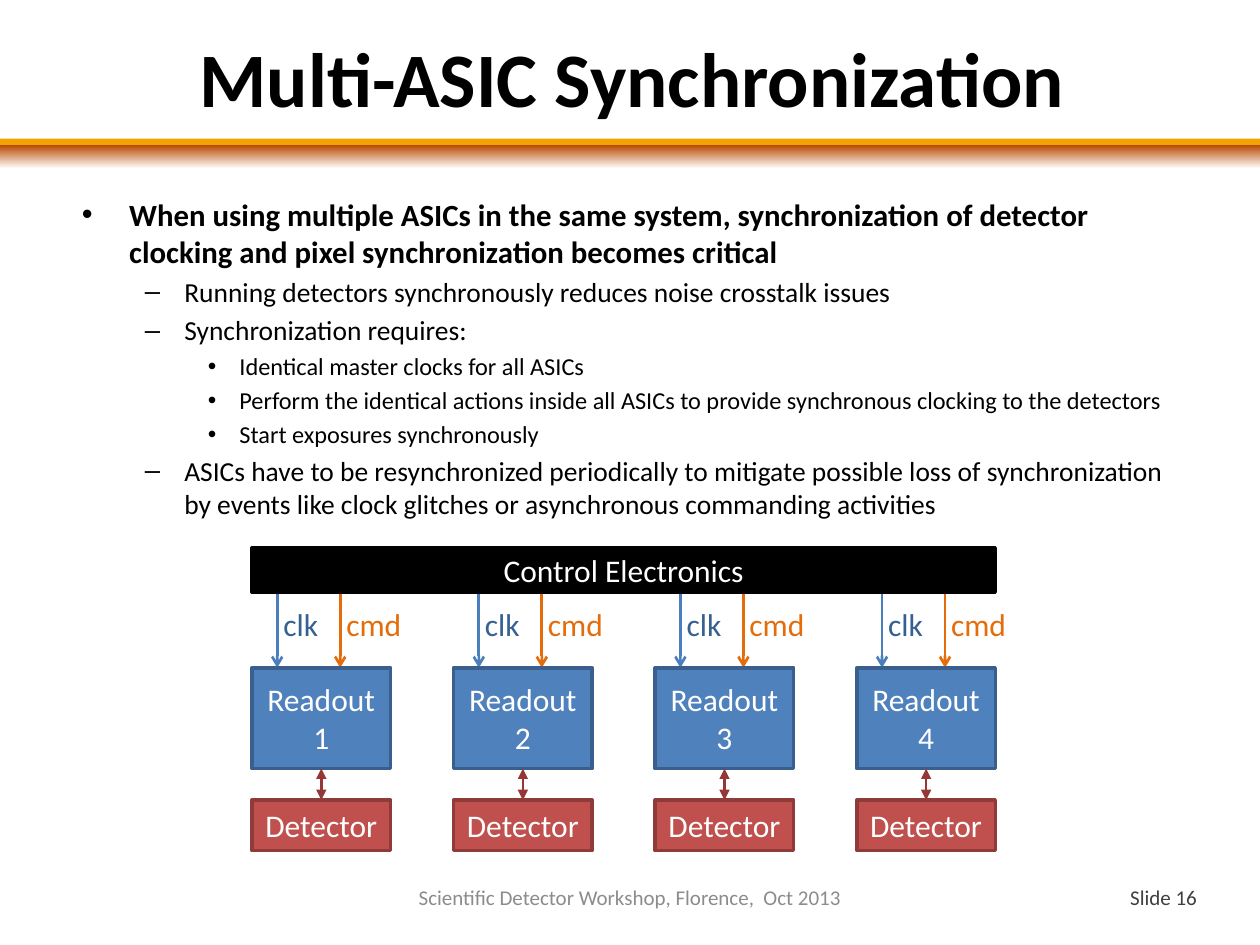
from lxml.etree import SubElement
from pptx import Presentation
from pptx.dml.color import RGBColor
from pptx.enum.shapes import MSO_CONNECTOR, MSO_SHAPE
from pptx.enum.text import MSO_ANCHOR, MSO_AUTO_SIZE, PP_ALIGN
from pptx.oxml.ns import qn
from pptx.util import Inches, Pt

FONT = "Calibri"
LEVEL_SIZES = [17.6, 15.7, 13.9]
BULLETS = [
    (0, "When using multiple ASICs in the same system, synchronization of detector "
        "clocking and pixel synchronization becomes critical"),
    (1, "Running detectors synchronously reduces noise crosstalk issues"),
    (1, "Synchronization requires:"),
    (2, "Identical master clocks for all ASICs"),
    (2, "Perform the identical actions inside all ASICs to provide synchronous "
        "clocking to the detectors"),
    (2, "Start exposures synchronously"),
    (1, "ASICs have to be resynchronized periodically to mitigate possible loss of "
        "synchronization by events like clock glitches or asynchronous commanding "
        "activities"),
]
# label, line colour, text colour, label width
SIGNALS = [("clk", "4B7EBC", "376092", 0.48), ("cmd", "E46C0A", "E46C0A", 0.64)]


def rgb(color):
    return RGBColor.from_string(color)


def set_font(p, size, color, bold=False):
    f = p.font
    f.name, f.size, f.bold = FONT, Pt(size), bold
    f.color.rgb = rgb(color)


def place(sp, x, y, w, h):
    sp.left, sp.top, sp.width, sp.height = (Inches(v) for v in (x, y, w, h))


def add_rect(s, x, y, w, h, fill=None, line=None):
    sp = s.shapes.add_shape(MSO_SHAPE.RECTANGLE, *(Inches(v) for v in (x, y, w, h)))
    sp.shadow.inherit = False
    if fill:
        sp.fill.solid()
        sp.fill.fore_color.rgb = rgb(fill)
    if line:
        sp.line.color.rgb = rgb(line)
        sp.line.width = Pt(2)
    else:
        sp.line.fill.background()
    return sp


def add_block(s, x, y, w, h, text, fill, line):
    """Draw a filled box with a centred white label."""
    tf = add_rect(s, x, y, w, h, fill, line).text_frame
    tf.word_wrap = True
    tf.vertical_anchor = MSO_ANCHOR.MIDDLE
    p = tf.paragraphs[0]
    p.text = text
    p.alignment = PP_ALIGN.CENTER
    set_font(p, 18, "FFFFFF")


def add_text(s, x, y, w, h, text, size, color):
    tf = s.shapes.add_textbox(*(Inches(v) for v in (x, y, w, h))).text_frame
    p = tf.paragraphs[0]
    p.text = text
    set_font(p, size, color)
    return tf


def add_arrow(s, x, y1, y2, color, head=None, tail=None):
    """Draw a vertical arrow; head and tail are the marks at y1 and y2."""
    c = s.shapes.add_connector(MSO_CONNECTOR.STRAIGHT, Inches(x), Inches(y1),
                               Inches(x), Inches(y2))
    c.line.color.rgb = rgb(color)
    c.line.width = Pt(1.5)
    ln = c.line._get_or_add_ln()
    for tag, mark in (("a:headEnd", head), ("a:tailEnd", tail)):
        if mark:
            SubElement(ln, qn(tag)).set("type", mark)
    SubElement(c._element.spPr, qn("a:effectLst"))


def add_header(s, y):
    """Draw the two rules below the title, starting at y."""
    add_rect(s, 0, y, 10, 0.05, "EFA404")
    fill = add_rect(s, 0, y + 0.05, 10, 0.19).fill
    fill.gradient()
    fill.gradient_angle = 270
    for stop, pos, color in zip(fill.gradient_stops, (0, 0.99), ("B84700", "FFFFFF")):
        stop.position = pos
        stop.color.rgb = rgb(color)


def fill_title(sp, x, y, w, h):
    place(sp, x, y, w, h)
    tf = sp.text_frame
    tf.auto_size = MSO_AUTO_SIZE.NONE
    tf.vertical_anchor = MSO_ANCHOR.MIDDLE
    p = tf.paragraphs[0]
    p.text = "Multi-ASIC Synchronization"
    p.alignment = PP_ALIGN.CENTER
    set_font(p, 44, "000000", True)


def fill_body(sp, x, y, w, h):
    place(sp, x, y, w, h)
    tf = sp.text_frame
    tf.auto_size = MSO_AUTO_SIZE.NONE
    for i, (level, text) in enumerate(BULLETS):
        p = tf.add_paragraph() if i else tf.paragraphs[0]
        p.text = text
        p.level = level
        size = LEVEL_SIZES[level]
        p.space_before = Pt(0.2 * size if i else 0)
        set_font(p, size, "000000", bold=level == 0)


def add_channel(s, x, y, w, number):
    """Draw one column: signals from the controller, readout chip, detector."""
    chip_y, detector_y = y + 0.6, y + 1.65
    chip_h = 0.8
    for i, (label, line, color, label_w) in enumerate(SIGNALS):
        signal_x = x + 0.2 + 0.5 * i
        add_arrow(s, signal_x, y, chip_y, line, tail="arrow")
        tf = add_text(s, signal_x - 0.05, y + 0.05, label_w, 0.4, label, 18, color)
        tf.word_wrap = False
        tf.auto_size = MSO_AUTO_SIZE.SHAPE_TO_FIT_TEXT
    add_block(s, x, chip_y, w, chip_h, f"Readout {number}", "4F81BD", "3A5F8C")
    add_arrow(s, x + w / 2, chip_y + chip_h, detector_y, "953735", "triangle", "triangle")
    add_block(s, x, detector_y, w, 0.4, "Detector", "C0504D", "8E3B39")


def add_diagram(s, x, y, w):
    count, channel_w, bar_h = 4, 1.1, 0.35
    step = (w - channel_w) / (count - 1)
    for i in range(count):
        add_channel(s, x + i * step, y + bar_h, channel_w, i + 1)
    add_block(s, x, y, w, bar_h, "Control Electronics", "000000", "000000")


def add_footer(s, y, h):
    for x, w, text, color in (
        (3.15, 3.7, "Scientific Detector Workshop, Florence,  Oct 2013", "8C8C8C"),
        (8.8, 0.87, "Slide 16", "404040"),
    ):
        tf = add_text(s, x, y, w, h, text, 12, color)
        tf.word_wrap = True
        tf.vertical_anchor = MSO_ANCHOR.MIDDLE
        tf.paragraphs[0].alignment = PP_ALIGN.CENTER


def main():
    prs = Presentation()
    prs.slide_width, prs.slide_height = Inches(10), Inches(7.5)
    s = prs.slides.add_slide(prs.slide_layouts[1])
    add_header(s, 1.1)
    fill_title(s.shapes.title, 0.52, 0.18, 9, 0.86)
    fill_body(s.placeholders[1], 0.55, 1.5, 9, 2.65)
    add_diagram(s, 2, 4.35, 5.9)
    add_footer(s, 6.92, 0.4)
    prs.save("out.pptx")


if __name__ == "__main__":
    main()
